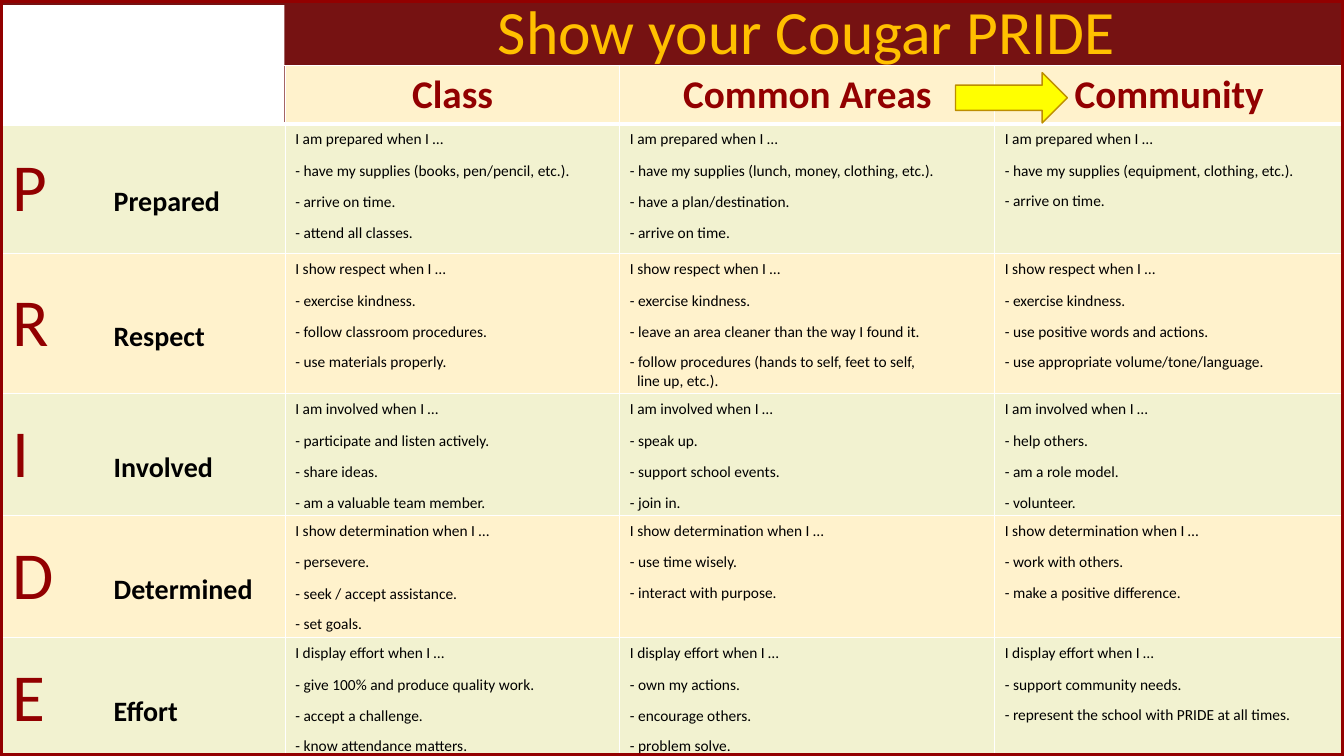
from lxml.etree import SubElement
from pptx import Presentation
from pptx.dml.color import RGBColor
from pptx.enum.shapes import MSO_SHAPE as Shape
from pptx.enum.text import MSO_ANCHOR as Anchor, MSO_AUTO_SIZE as AutoSize, PP_ALIGN as Align
from pptx.oxml import parse_xml
from pptx.oxml.ns import nsdecls, qn
from pptx.util import Cm, Pt

FONT = "Calibri"
BACKDROP = RGBColor(0x76, 0x12, 0x12)
MAROON = RGBColor(0x92, 0x00, 0x00)
GOLD = RGBColor(0xFF, 0xC0, 0x00)
CREAM = RGBColor(0xFF, 0xF2, 0xCC)
GREEN = RGBColor(0xF2, 0xF2, 0xD0)
YELLOW = RGBColor(0xFF, 0xFF, 0x00)
OCHRE = RGBColor(0xBD, 0x8E, 0x00)
WHITE = RGBColor(0xFF, 0xFF, 0xFF)
BLACK = RGBColor(0x00, 0x00, 0x00)

SLIDE_WIDTH, SLIDE_HEIGHT = Cm(33.87), Cm(19.05)
COLUMN_WIDTHS = [Cm(7.14), Cm(8.43), Cm(9.45), Cm(8.79)]
ROW_HEIGHTS = [Cm(1.47), Cm(3.27), Cm(3.53), Cm(3.06), Cm(3.08), Cm(3.02)]
SETTINGS = ["Class", "Common Areas", "Community"]
VALUES = [
    ("Prepared", "I am prepared when I …", [
        ["have my supplies (books, pen/pencil, etc.).", "arrive on time.", "attend all classes."],
        ["have my supplies (lunch, money, clothing, etc.).", "have a plan/destination.",
         "arrive on time."],
        ["have my supplies (equipment, clothing, etc.).", "arrive on time."],
    ]),
    ("Respect", "I show respect when I …", [
        ["exercise kindness.", "follow classroom procedures.", "use materials properly."],
        ["exercise kindness.", "leave an area cleaner than the way I found it.",
         "follow procedures (hands to self, feet to self,\nline up, etc.)."],
        ["exercise kindness.", "use positive words and actions.",
         "use appropriate volume/tone/language."],
    ]),
    ("Involved", "I am involved when I …", [
        ["participate and listen actively.", "share ideas.", "am a valuable team member."],
        ["speak up.", "support school events.", "join in."],
        ["help others.", "am a role model.", "volunteer."],
    ]),
    ("Determined", "I show determination when I …", [
        ["persevere.", "seek / accept assistance.", "set goals."],
        ["use time wisely.", "interact with purpose."],
        ["work with others.", "make a positive difference."],
    ]),
    ("Effort", "I display effort when I …", [
        ["give 100% and produce quality work.", "accept a challenge.", "know attendance matters."],
        ["own my actions.", "encourage others.", "problem solve."],
        ["support community needs.", "represent the school with PRIDE at all times."],
    ]),
]


def add_span(para, text, size, color, bold=False):
    span = para.add_run()
    span.text = text
    span.font.name = FONT
    span.font.size = Pt(size)
    span.font.bold = bold
    span.font.color.rgb = color


def add_figure(page, kind, box, fill=None, line=None, weight=1):
    figure = page.shapes.add_shape(kind, *box)
    figure.shadow.inherit = False
    if fill is None:
        figure.fill.background()
    else:
        figure.fill.solid()
        figure.fill.fore_color.rgb = fill
    if line is None:
        figure.line.fill.background()
    else:
        figure.line.color.rgb = line
        figure.line.width = Pt(weight)


def add_title(page, box):
    title = page.shapes.add_textbox(*box).text_frame
    title.word_wrap = True
    title.auto_size = AutoSize.SHAPE_TO_FIT_TEXT
    para = title.paragraphs[0]
    para.alignment = Align.CENTER
    add_span(para, "Show your Cougar PRIDE ", 44, GOLD)


def style_cell(cell, fill, bottom=1):
    if fill is None:
        cell.fill.background()
    else:
        cell.fill.solid()
        cell.fill.fore_color.rgb = fill
    properties = cell._tc.get_or_add_tcPr()
    for place, (side, weight) in enumerate([("L", 1), ("R", 1), ("T", 1), ("B", bottom)]):
        properties.insert(place, parse_xml(
            f'<a:ln{side} {nsdecls("a")} w="{Pt(weight)}"><a:solidFill>'
            f'<a:srgbClr val="{WHITE}"/></a:solidFill></a:ln{side}>'))


def fill_heading(cell, text):
    cell.vertical_anchor = Anchor.MIDDLE
    para = cell.text_frame.paragraphs[0]
    para.alignment = Align.CENTER
    add_span(para, text, 28, MAROON, True)


def fill_label(cell, word):
    cell.vertical_anchor = Anchor.MIDDLE
    para = cell.text_frame.paragraphs[0]
    tabs = SubElement(para._p.get_or_add_pPr(), qn("a:tabLst"))
    SubElement(tabs, qn("a:tab"), pos=str(Cm(2.56)), algn="l")
    add_span(para, word[0], 48, MAROON)
    add_span(para, "\t" + word, 20, BLACK, True)


def fill_actions(cell, lead, actions):
    frame = cell.text_frame
    lines = [lead] + ["- " + action for action in actions]
    for number, line in enumerate(lines):
        para = frame.add_paragraph() if number else frame.paragraphs[0]
        if number < len(lines) - 1:
            para.line_spacing = 1.07
            para.space_after = Pt(8)
        first, *rest = line.split("\n")
        add_span(para, first, 11, BLACK)
        for part in rest:
            indent = Cm(0.18)
            properties = para._p.get_or_add_pPr()
            properties.set("marL", str(indent))
            properties.set("indent", str(-indent))
            para.add_line_break()
            add_span(para, part, 11, BLACK)


def add_matrix(page, left, top):
    box = left, top, sum(COLUMN_WIDTHS), sum(ROW_HEIGHTS)
    table = page.shapes.add_table(len(ROW_HEIGHTS), len(COLUMN_WIDTHS), *box).table
    table.first_row = table.horz_banding = False
    for column, width in zip(table.columns, COLUMN_WIDTHS):
        column.width = width
    for row, height in zip(table.rows, ROW_HEIGHTS):
        row.height = height
    style_cell(table.cell(0, 0), None, 3)
    for column, setting in enumerate(SETTINGS, 1):
        style_cell(table.cell(0, column), CREAM, 3)
        fill_heading(table.cell(0, column), setting)
    for row, (word, lead, lists) in enumerate(VALUES, 1):
        for column in range(len(COLUMN_WIDTHS)):
            style_cell(table.cell(row, column), GREEN if row % 2 else CREAM)
        fill_label(table.cell(row, 0), word)
        for column, actions in enumerate(lists, 1):
            fill_actions(table.cell(row, column), lead, actions)


def build_pride_page(deck):
    page = deck.slides.add_slide(deck.slide_layouts[6])
    page.background.fill.solid()
    page.background.fill.fore_color.rgb = BACKDROP
    add_title(page, (Cm(7.16), Cm(-0.3), Cm(26.7), Cm(2.13)))
    add_matrix(page, Cm(0.05), Cm(1.65))
    add_figure(page, Shape.RECTANGLE, (Cm(0.08), Cm(0.13), Cm(7.09), Cm(3)), fill=WHITE)
    add_figure(page, Shape.RECTANGLE, (0, 0, SLIDE_WIDTH, SLIDE_HEIGHT), line=MAROON, weight=4.75)
    add_figure(page, Shape.RIGHT_ARROW, (Cm(24.08), Cm(1.83), Cm(2.82), Cm(1.27)),
               fill=YELLOW, line=OCHRE)


def main():
    deck = Presentation()
    deck.slide_width, deck.slide_height = SLIDE_WIDTH, SLIDE_HEIGHT
    build_pride_page(deck)
    deck.save("out.pptx")


if __name__ == "__main__":
    main()
